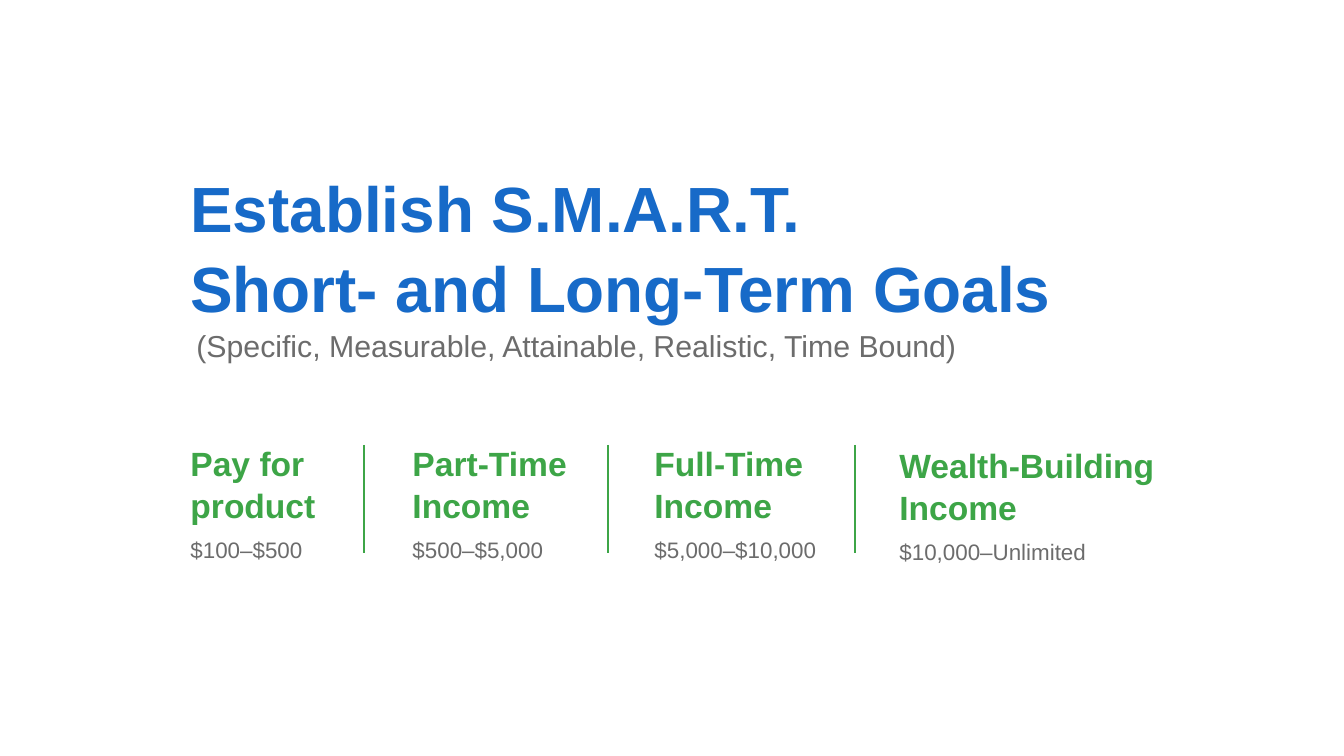
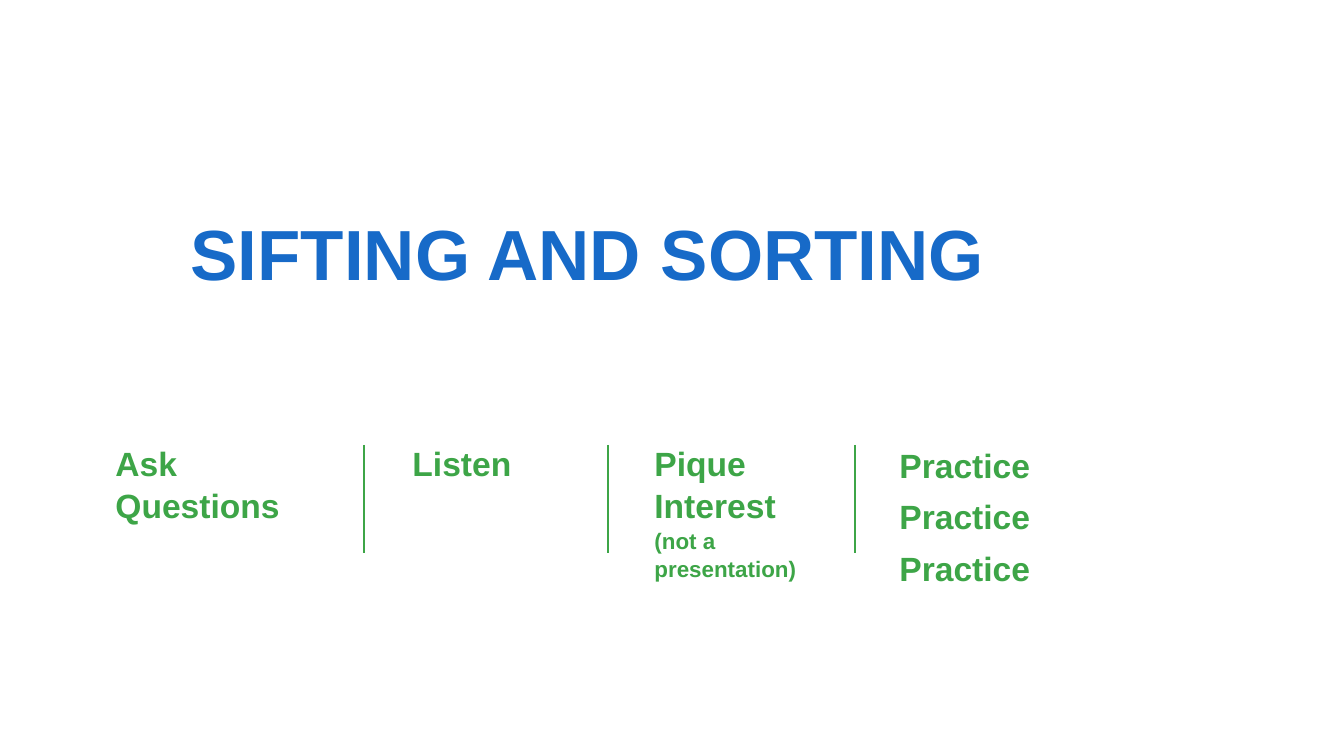
from lxml import etree
from pptx import Presentation
from pptx import util as u
from pptx.dml.color import RGBColor
from pptx.enum import shapes, text
from pptx.oxml.ns import qn

BLUE = RGBColor(0x17, 0x6A, 0xC8)
GREEN = RGBColor(0x3D, 0xA5, 0x47)
GREY = RGBColor(0x6C, 0x6C, 0x6C)
FONT = "Arial"
PX = 914400 / 134.4

HEAD = (18, GREEN, True)
NOTE = (12, GREEN, True)
AMOUNT = (12, GREY, False)
SUBTITLE = (16.2, GREY, False)

TITLE_BOX = (177, 164, 973, 200)
COLUMN_BOXES = [(177, 434, 153, 156), (399, 434, 183, 134),
                (641, 434, 191, 134), (886, 436, 284, 134)]
DIVIDERS = [364, 608, 855]
DIVIDER_TOP, DIVIDER_BOTTOM = 445, 553
INSET = 7

SLIDES = [
    {
        "title": [[("Establish S.M.A.R.T.\vShort- and Long-Term Goals", (34.2, BLUE, True))],
                  [("(Specific, Measurable, Attainable, Realistic, Time Bound)", SUBTITLE)]],
        "subtitle_indent": 6,
        "title_bottom": INSET,
        "columns": [
            [[("Pay for product", HEAD)], [("$100–$500", AMOUNT)]],
            [[("Part-Time Income", HEAD)], [("$500–$5,000", AMOUNT)]],
            [[("Full-Time Income", HEAD)], [("$5,000–$10,000", AMOUNT)]],
            [[("Wealth-Building Income", HEAD)], [("$10,000–Unlimited", AMOUNT)]],
        ],
        "first_box": COLUMN_BOXES[0],
    },
    {
        "title": [[("SIFTING AND SORTING", (38, BLUE, True))]],
        "subtitle_indent": 0,
        "title_bottom": INSET + 27,
        "columns": [
            [[("Ask Questions", HEAD)]],
            [[("Listen", HEAD)]],
            [[("Pique Interest ", HEAD), ("(not a presentation)", NOTE)]],
            [[("Practice", HEAD)]] * 3,
        ],
        "first_box": (102, 434, 228, 156),
    },
]


def px(n):
    return u.Emu(round(n * PX))


def fill_placeholder(sp, box, paragraphs, anchor, gap=0, indent=0):
    sp.left, sp.top, sp.width, sp.height = map(px, box)
    tf = sp.text_frame
    tf.word_wrap = True
    tf.auto_size = text.MSO_AUTO_SIZE.NONE
    tf.vertical_anchor = anchor
    for i, runs in enumerate(paragraphs):
        p = tf.paragraphs[0] if i == 0 else tf.add_paragraph()
        p_pr = p._p.get_or_add_pPr()
        p_pr.set("marL", str(px(indent) if i else 0))
        p_pr.set("indent", "0")
        etree.SubElement(p_pr, qn("a:buNone"))
        p.alignment = text.PP_ALIGN.LEFT
        p.line_spacing = 1.05
        p.space_before = u.Pt(gap if i else 0)
        p.space_after = u.Pt(0)
        for words, (size, color, bold) in runs:
            for j, line in enumerate(words.split("\v")):
                if j:
                    p.add_line_break()
                r = p.add_run()
                r.text = line
                r.font.name = FONT
                r.font.size = u.Pt(size)
                r.font.bold = bold
                r.font.color.rgb = color


def add_divider(s, x):
    line = s.shapes.add_connector(shapes.MSO_CONNECTOR.STRAIGHT,
                                  px(x), px(DIVIDER_TOP), px(x), px(DIVIDER_BOTTOM))
    line.line.color.rgb = GREEN
    line.line.width = u.Pt(1.5)
    etree.SubElement(line._element.spPr, qn("a:effectLst"))


def build_slide(prs, content):
    s = prs.slides.add_slide(prs.slide_layouts.get_by_name("Comparison"))
    title = s.shapes.title
    fill_placeholder(title, TITLE_BOX, content["title"], text.MSO_ANCHOR.MIDDLE,
                     indent=content["subtitle_indent"])
    title.text_frame.margin_bottom = px(content["title_bottom"])
    bodies = [sp for sp in s.placeholders if sp.placeholder_format.idx]
    boxes = [content["first_box"]] + COLUMN_BOXES[1:]
    for sp, box, paragraphs in zip(bodies, boxes, content["columns"]):
        fill_placeholder(sp, box, paragraphs, text.MSO_ANCHOR.TOP, gap=5)
    for x in DIVIDERS:
        add_divider(s, x)


def main():
    prs = Presentation()
    prs.slide_width, prs.slide_height = px(1344), px(756)
    for content in SLIDES:
        build_slide(prs, content)
    prs.save("out.pptx")


if __name__ == "__main__":
    main()
